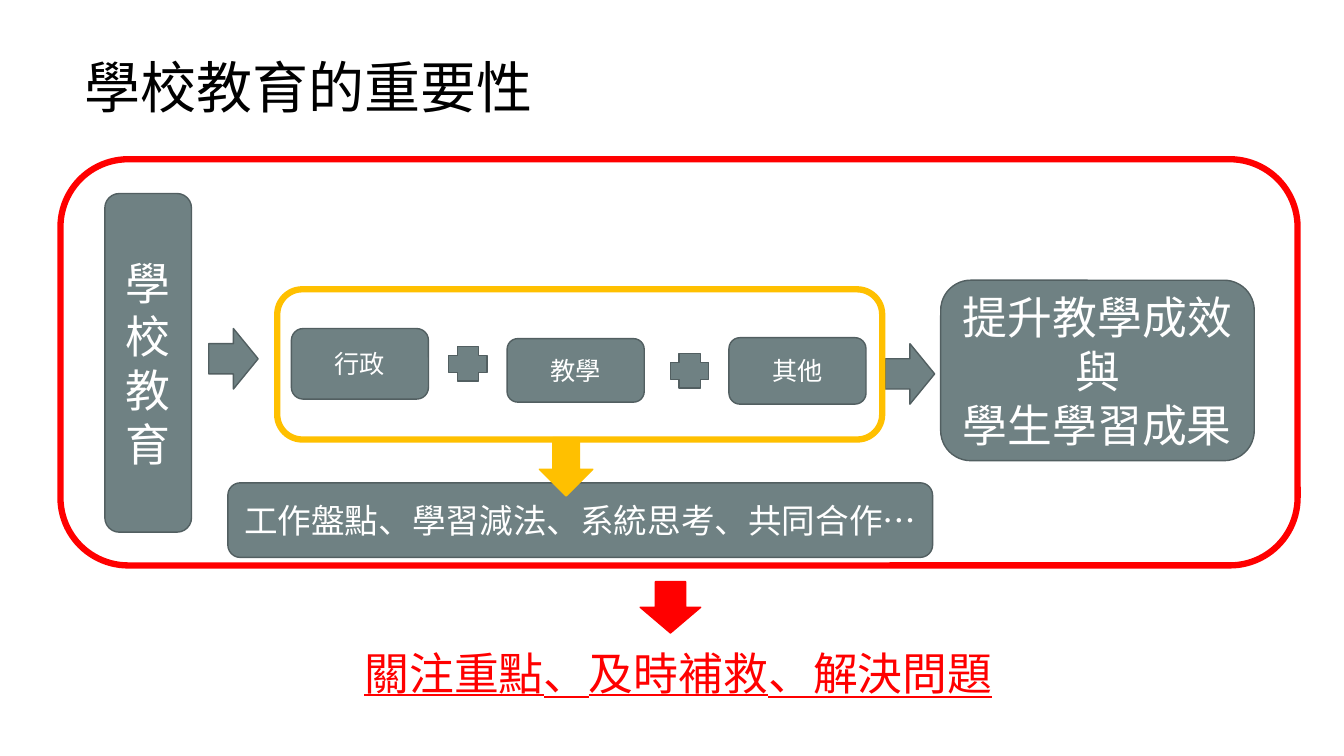
from lxml import etree
from pptx import Presentation
from pptx.dml.color import RGBColor
from pptx.enum.shapes import MSO_SHAPE
from pptx.enum.text import MSO_ANCHOR, PP_ALIGN
from pptx.oxml import ns
from pptx.util import Inches, Pt

SLATE = RGBColor(0x6F, 0x81, 0x83)
SLATE_EDGE = RGBColor(0x52, 0x5F, 0x61)
GOLD = RGBColor(0xFF, 0xC0, 0x00)
RED = RGBColor(0xFF, 0x00, 0x00)
WHITE = RGBColor(0xFF, 0xFF, 0xFF)
BLACK = RGBColor(0x00, 0x00, 0x00)
JP, SC, TC = "Noto Sans CJK JP", "Noto Sans CJK SC", "Noto Sans CJK TC"
SLAB = "Roboto Slab"

# Content: paragraphs, font, size, (left, top, width, height)
TITLE = "學校教育的重要性"
BOXES = [
    (["學校教育"], SC, 32, (1.04, 1.92, 0.86, 3.36)),
    (["行政"], SLAB, 18, (2.89, 3.26, 1.36, 0.7)),
    (["教學"], SLAB, 18, (5.03, 3.36, 1.36, 0.63)),
    (["其他"], SLAB, 18, (7.23, 3.35, 1.36, 0.66)),
    (["工作盤點、學習減法、系統思考、共同合作…"], SC, 24, (2.26, 4.79, 6.99, 0.74)),
    (["提升教學成效與", "學生學習成果"], SC, 32, (9.33, 2.78, 3.11, 1.79)),
]
# Signs, arrows and frames: preset, place, fill, line, line width
MARKS = [
    (MSO_SHAPE.CROSS, (4.45, 3.44, 0.38, 0.34), SLATE, SLATE_EDGE, 1),
    (MSO_SHAPE.CROSS, (6.65, 3.51, 0.38, 0.34), SLATE, SLATE_EDGE, 1),
    (MSO_SHAPE.RIGHT_ARROW, (2.07, 3.26, 0.49, 0.6), SLATE, SLATE_EDGE, 1),
    (MSO_SHAPE.RIGHT_ARROW, (8.78, 3.41, 0.49, 0.6), SLATE, SLATE_EDGE, 1),
    (MSO_SHAPE.ROUNDED_RECTANGLE, (2.75, 2.87, 6, 1.49), None, GOLD, 4.5),
    (MSO_SHAPE.DOWN_ARROW, (5.35, 4.34, 0.53, 0.58), GOLD, GOLD, 1),
    (MSO_SHAPE.ROUNDED_RECTANGLE, (0.6, 1.58, 12.27, 4.03), None, RED, 4.5),
    (MSO_SHAPE.DOWN_ARROW, (6.35, 5.77, 0.6, 0.51), RED, RED, 1),
]
CONCLUSION = [("關注重點", SLAB), ("、", TC), ("及時補救", SLAB), ("、解決問題", TC)]


def add_preset(page, preset, place, fill, line=None, width=1):
    shape = page.shapes.add_shape(preset, *map(Inches, place))
    shape.shadow.inherit = False
    if fill is None:
        shape.fill.background()
    else:
        shape.fill.solid()
        shape.fill.fore_color.rgb = fill
    if line is None:
        shape.line.fill.background()
    else:
        shape.line.color.rgb = line
        shape.line.width = Pt(width)
    return shape


def style_span(span, font, size, color, underline=None):
    span.font.name = font
    span.font.size = Pt(size)
    span.font.color.rgb = color
    span.font.underline = underline
    # East Asian glyphs take their font from a:ea, right after a:latin
    east_asian = etree.Element(ns.qn("a:ea"), typeface=font)
    span.font._element.find(ns.qn("a:latin")).addnext(east_asian)


def prepare_frame(shape):
    frame = shape.text_frame
    frame.word_wrap = True
    frame.vertical_anchor = MSO_ANCHOR.MIDDLE
    return frame


def main():
    deck = Presentation()
    deck.slide_width, deck.slide_height = Inches(13.33), Inches(7.5)
    page = deck.slides.add_slide(deck.slide_layouts[6])

    # Title
    title = page.shapes.add_textbox(*map(Inches, (0.74, 0.41, 9.4, 0.98)))
    para = prepare_frame(title).paragraphs[0]
    para.text = TITLE
    para.line_spacing = 0.9
    style_span(para.runs[0], JP, 40, BLACK)

    # Labelled boxes
    for lines, font, size, place in BOXES:
        box = add_preset(page, MSO_SHAPE.ROUNDED_RECTANGLE, place, SLATE, SLATE_EDGE)
        frame = prepare_frame(box)
        frame.text = "\n".join(lines)
        for para in frame.paragraphs:
            para.alignment = PP_ALIGN.CENTER
            style_span(para.runs[0], font, size, WHITE)

    # Signs, arrows and frames
    for mark in MARKS:
        add_preset(page, *mark)

    # Conclusion
    banner = add_preset(page, MSO_SHAPE.RECTANGLE, (3.33, 6.33, 6.8, 0.68), WHITE)
    para = prepare_frame(banner).paragraphs[0]
    para.alignment = PP_ALIGN.CENTER
    for words, font in CONCLUSION:
        span = para.add_run()
        span.text = words
        style_span(span, font, 32, RED, underline=True)

    deck.save("out.pptx")


if __name__ == "__main__":
    main()
